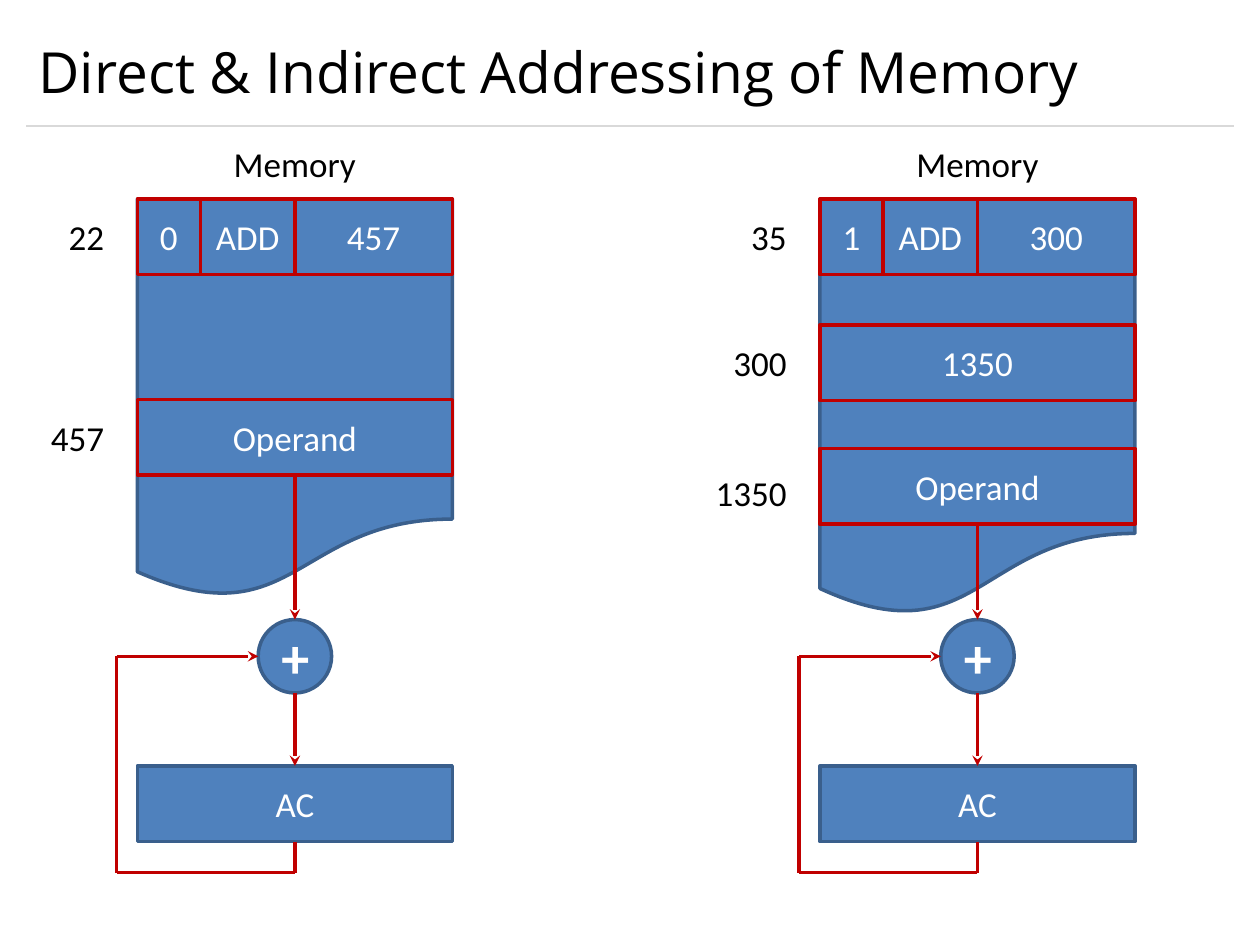
import lxml.etree
import pptx
import pptx.dml.color
import pptx.enum.shapes
import pptx.enum.text
import pptx.oxml.ns
import pptx.util

Cm = pptx.util.Cm
Pt = pptx.util.Pt
RGBColor = pptx.dml.color.RGBColor
SHAPE = pptx.enum.shapes.MSO_SHAPE
ALIGN = pptx.enum.text.PP_ALIGN
ANCHOR = pptx.enum.text.MSO_ANCHOR

BLACK = RGBColor(0x00, 0x00, 0x00)
WHITE = RGBColor(0xFF, 0xFF, 0xFF)
BLUE = RGBColor(0x4F, 0x81, 0xBD)
DARK_BLUE = RGBColor(0x3A, 0x5F, 0x8C)
RED = RGBColor(0xC0, 0x00, 0x00)
RULE_GRAY = RGBColor(0xD9, 0xD9, 0xD9)

MEMORY_WIDTH = 6.35
ROW_HEIGHT = 1.53
LABEL_HEIGHT = 1.12
FIELD_SHARES = (0.2, 0.3, 0.5)  # mode bit, opcode, address
ADDER_TOP = 8.48
ADDER_SIZE = 1.48
AC_TOP = 11.43
LOOP_BOTTOM = 13.58
LEFT_GAP = 0.42


def write(shape, text, size=20, font="Calibri", color=BLACK, bold=False,
          align=ALIGN.CENTER, anchor=ANCHOR.MIDDLE):
    frame = shape.text_frame
    frame.word_wrap = True
    frame.vertical_anchor = anchor
    paragraph = frame.paragraphs[0]
    paragraph.alignment = align
    run = paragraph.add_run()
    run.text = text
    run.font.size = Pt(size)
    run.font.name = font
    run.font.bold = bold
    run.font.color.rgb = color


def add_label(slide, text, left, top, width, height=LABEL_HEIGHT, **text_format):
    label = slide.shapes.add_textbox(Cm(left), Cm(top), Cm(width), Cm(height))
    write(label, text, **text_format)


def add_block(slide, left, top, width, height, text="", kind=SHAPE.RECTANGLE,
              outline=DARK_BLUE, **text_format):
    block = slide.shapes.add_shape(kind, Cm(left), Cm(top), Cm(width), Cm(height))
    block.shadow.inherit = False
    block.fill.solid()
    block.fill.fore_color.rgb = BLUE
    block.line.color.rgb = outline
    block.line.width = Pt(2)
    if text:
        write(block, text, color=WHITE, **text_format)
    return block


def add_line(slide, start, end, color=RED, weight=2, arrow=False):
    line = slide.shapes.add_connector(
        pptx.enum.shapes.MSO_CONNECTOR.STRAIGHT,
        *(Cm(length) for length in (*start, *end)))
    line.line.color.rgb = color
    line.line.width = Pt(weight)
    if arrow:
        lxml.etree.SubElement(line.line._get_or_add_ln(),
                              pptx.oxml.ns.qn("a:tailEnd"), type="stealth")
    lxml.etree.SubElement(line._element.spPr, pptx.oxml.ns.qn("a:effectLst"))
    return line


def add_heading(slide, left, top, width, height):
    add_label(slide, "Direct & Indirect Addressing of Memory", left, top, width,
              height, size=32.4, font="Open Sans", align=ALIGN.LEFT)
    add_line(slide, (left, top + height), (left + width, top + height),
             color=RULE_GRAY, weight=0.75)


def add_memory(slide, left, top, height, address, fields, words):
    """Draw the memory with its instruction and words; return the last word.

    Each word is (address, content, offset from top, extra drop of the address).
    """
    def add_address(text, row_top):
        width = 2.13
        add_label(slide, text, left - LEFT_GAP - width,
                  row_top + (ROW_HEIGHT - LABEL_HEIGHT) / 2, width,
                  align=ALIGN.RIGHT)

    add_label(slide, "Memory", left, top - 1.27, MEMORY_WIDTH)
    add_block(slide, left, top, MEMORY_WIDTH, height, kind=SHAPE.FLOWCHART_DOCUMENT)

    add_address(address, top)
    field_left = left
    for field, share in zip(fields, FIELD_SHARES):
        field_width = MEMORY_WIDTH * share
        add_block(slide, field_left, top, field_width, ROW_HEIGHT, field, outline=RED)
        field_left += field_width

    for word_address, content, offset, drop in words:
        add_address(word_address, top + offset + drop)
        word = add_block(slide, left, top + offset, MEMORY_WIDTH, ROW_HEIGHT,
                         content, outline=RED)
    return word


def add_accumulator(slide, left, top, operand):
    """Draw the adder fed by the operand, the AC and its feedback loop."""
    middle = left + MEMORY_WIDTH / 2
    adder_left = middle - ADDER_SIZE / 2
    adder_top = top + ADDER_TOP
    adder_bottom = adder_top + ADDER_SIZE
    adder_middle = adder_top + ADDER_SIZE / 2
    ac_top = top + AC_TOP
    loop_left = left - LEFT_GAP
    loop_bottom = top + LOOP_BOTTOM

    accumulator = add_block(slide, left, ac_top, MEMORY_WIDTH, ROW_HEIGHT, "AC")
    adder = add_block(slide, adder_left, adder_top, ADDER_SIZE, ADDER_SIZE, "+",
                      kind=SHAPE.OVAL, size=32, bold=True)

    operand_arrow = add_line(slide, (middle, top), (middle, adder_top), arrow=True)
    operand_arrow.begin_connect(operand, 2)
    operand_arrow.end_connect(adder, 0)
    sum_arrow = add_line(slide, (middle, adder_bottom), (middle, ac_top), arrow=True)
    sum_arrow.end_connect(accumulator, 0)

    feedback = add_line(slide, (middle, ac_top + ROW_HEIGHT), (middle, loop_bottom))
    feedback.begin_connect(accumulator, 2)
    add_line(slide, (middle, loop_bottom), (loop_left, loop_bottom))
    add_line(slide, (loop_left, loop_bottom), (loop_left, adder_middle))
    add_line(slide, (loop_left, adder_middle), (adder_left, adder_middle), arrow=True)


def add_addressing(slide, left, top, height, address, fields, words):
    operand = add_memory(slide, left, top, height, address, fields, words)
    add_accumulator(slide, left, top, operand)


def main():
    deck = pptx.Presentation()
    deck.slide_width = Cm(25.4)
    deck.slide_height = Cm(19.05)
    slide = deck.slides.add_slide(deck.slide_layouts[6])

    add_heading(slide, 0.53, 0.3, 24.34, 2.24)
    add_addressing(slide, 2.77, 4.01, 8.05, "22", ("0", "ADD", "457"),
                   [("457", "Operand", 4.04, 0)])
    add_addressing(slide, 16.53, 4.01, 8.41, "35", ("1", "ADD", "300"),
                   [("300", "1350", 2.54, 0), ("1350", "Operand", 5.03, 0.12)])

    deck.save("out.pptx")


if __name__ == "__main__":
    main()
